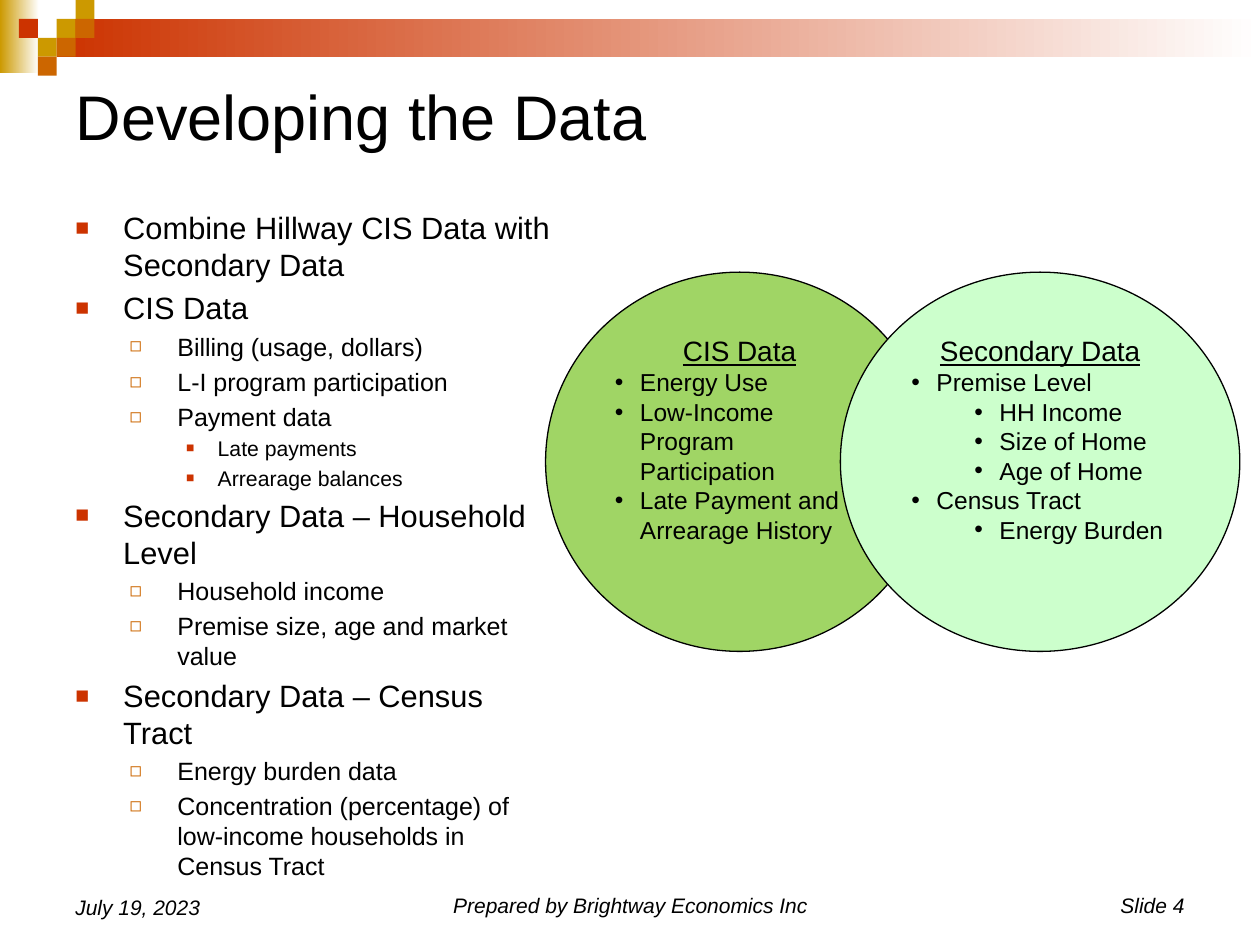
import dataclasses
import typing
import lxml.etree
import pptx
import pptx.dml.color
import pptx.enum.shapes
import pptx.enum.text
import pptx.oxml.ns
import pptx.util

RGB = pptx.dml.color.RGBColor
Align = pptx.enum.text.PP_ALIGN
Anchor = pptx.enum.text.MSO_ANCHOR
Kind = pptx.enum.shapes.MSO_SHAPE
Pt = pptx.util.Pt
Box = tuple[float, float, float, float]

BLACK = RGB(0, 0, 0)
WHITE = RGB(255, 255, 255)
GOLD = RGB(0xCC, 0x99, 0x00)
RUST = RGB(0xCC, 0x66, 0x00)
RED = RGB(0xCC, 0x33, 0x00)
GREEN = RGB(0xA0, 0xD5, 0x65)
MINT = RGB(0xCC, 0xFF, 0xCC)

WIDE, HIGH = pptx.util.Inches(10), pptx.util.Inches(7.5)
TILE_W, TILE_H = 1.5, 2


@dataclasses.dataclass
class Style:
    size: float
    left: float = 0
    hang: float = 0
    mark: str = ""
    tint: RGB | None = None
    scale: int = 100
    gap: float = 0
    align: Align = Align.LEFT
    under: bool = False
    slant: bool = False


@dataclasses.dataclass
class Line:
    text: str
    style: Style


@dataclasses.dataclass
class Disc:
    box: Box
    fill: RGB
    lines: list[Line]


@dataclasses.dataclass
class Foot:
    text: str
    box: Box
    align: Align


TITLE = Style(36)
TOP = Style(17.6, 0.38, 0.38, "■", RED, 75, 3.5)
MID = Style(14.3, 0.81, 0.38, "◻", RUST, 80, 2.9)
LOW = Style(12.1, 1.13, 0.25, "■", RED, 65, 2.4)
HEAD = Style(16, align=Align.CENTER, under=True)
DOT = Style(14, 0.2, 0.2, "•")
SUB = Style(14, 0.7, 0.2, "•")

BODY = [
    Line("Combine Hillway CIS Data with Secondary Data", dataclasses.replace(TOP, gap=0)),
    Line("CIS Data", TOP),
    Line("Billing (usage, dollars)", MID),
    Line("L-I program participation", MID),
    Line("Payment data", MID),
    Line("Late payments", LOW),
    Line("Arrearage balances", LOW),
    Line("Secondary Data – Household Level", TOP),
    Line("Household income", MID),
    Line("Premise size, age and market value", MID),
    Line("Secondary Data – Census Tract", TOP),
    Line("Energy burden data", MID),
    Line("Concentration (percentage) of low-income households in Census Tract", MID),
]
DISCS = [
    Disc((43.3, 28.8, 30.8, 40.13), GREEN, [
        Line("CIS Data", HEAD),
        Line("Energy Use", DOT),
        Line("Low-Income Program Participation", DOT),
        Line("Late Payment and Arrearage History", DOT),
    ]),
    Disc((66.7, 28.8, 31.7, 40.13), MINT, [
        Line("Secondary Data", HEAD),
        Line("Premise Level", DOT),
        Line("HH Income", SUB),
        Line("Size of Home", SUB),
        Line("Age of Home", SUB),
        Line("Census Tract", DOT),
        Line("Energy Burden", SUB),
    ]),
]
FEET = [
    Foot("July 19, 2023", (5, 91.07, 23.3, 6.93), Align.LEFT),
    Foot("Prepared by Brightway Economics Inc", (34.2, 91.07, 31.7, 6.67), Align.CENTER),
    Foot("Slide 4", (71.7, 91.07, 23.3, 6.67), Align.RIGHT),
]
BANDS = [((0, 0, 3.1, 7.73), GOLD), ((4.5, 2, 95.5, 4), RED)]
TILES = [(3, 1, GOLD), (4, 0, GOLD), (4, 1, RUST), (2, 2, GOLD),
         (1, 1, RED), (3, 2, RUST), (2, 3, RUST)]


def apply(thing: typing.Any, form: dict[str, typing.Any]) -> None:
    for name, value in form.items():
        setattr(thing, name, value)


def scale(box: Box) -> list[int]:
    return [int(share * full / 100) for share, full in zip(box, (WIDE, HIGH) * 2)]


def add_mark(para: typing.Any, style: Style) -> None:
    props = para._p.get_or_add_pPr()
    props.set("marL", str(int(pptx.util.Inches(style.left))))
    props.set("indent", str(-int(pptx.util.Inches(style.hang))))

    def add(parent: typing.Any, tag: str, **facts: str) -> typing.Any:
        return lxml.etree.SubElement(parent, pptx.oxml.ns.qn(tag), **facts)

    if style.tint is not None:
        add(add(props, "a:buClr"), "a:srgbClr", val=str(style.tint))
    add(props, "a:buSzPct", val=str(style.scale * 1000))
    add(props, "a:buFont", typeface="Arial")
    add(props, "a:buChar", char=style.mark)


def write(frame: typing.Any, lines: list[Line], anchor: Anchor = Anchor.TOP) -> None:
    apply(frame, {"word_wrap": True, "vertical_anchor": anchor})
    for spot, line in enumerate(lines):
        para = frame.add_paragraph() if spot else frame.paragraphs[0]
        style = line.style
        para.text = line.text
        if style.mark:
            add_mark(para, style)
        apply(para, {"alignment": style.align, "space_before": Pt(style.gap)})
        apply(para.font, {"name": "Arial", "size": Pt(style.size),
                          "underline": style.under, "italic": style.slant})
        para.font.color.rgb = BLACK


def add_shape(slide: typing.Any, kind: Kind, box: Box, fill: RGB) -> typing.Any:
    shape = slide.shapes.add_shape(kind, *scale(box))
    shape.shadow.inherit = False
    shape.fill.solid()
    shape.fill.fore_color.rgb = fill
    shape.line.fill.background()
    return shape


def add_band(slide: typing.Any, box: Box, start: RGB) -> None:
    fill = add_shape(slide, Kind.RECTANGLE, box, start).fill
    fill.gradient()
    fill.gradient_angle = 0
    for stop, tint, place in zip(fill.gradient_stops, (start, WHITE), (0, 1)):
        stop.color.rgb = tint
        stop.position = place


def add_disc(slide: typing.Any, disc: Disc) -> None:
    shape = add_shape(slide, Kind.OVAL, disc.box, disc.fill)
    shape.line.color.rgb = BLACK
    shape.line.width = Pt(0.75)
    write(shape.text_frame, disc.lines)


def add_text(slide: typing.Any, box: Box, lines: list[Line],
             anchor: Anchor = Anchor.TOP) -> None:
    write(slide.shapes.add_textbox(*scale(box)).text_frame, lines, anchor)


def main() -> None:
    deck = pptx.Presentation()
    apply(deck, {"slide_width": WIDE, "slide_height": HIGH})
    slide = deck.slides.add_slide(deck.slide_layouts[5])
    for box, start in BANDS:
        add_band(slide, box, start)
    for col, row, fill in TILES:
        add_shape(slide, Kind.RECTANGLE,
                  (col * TILE_W, row * TILE_H, TILE_W, TILE_H), fill)
    title = slide.shapes.title
    apply(title, dict(zip(("left", "top", "width", "height"),
                          scale((5, 6.67, 90, 11.07)))))
    write(title.text_frame, [Line("Developing the Data", TITLE)], Anchor.MIDDLE)
    add_text(slide, (5, 21.47, 40, 65.47), BODY)
    for disc in DISCS:
        add_disc(slide, disc)
    for foot in FEET:
        style = Style(12, align=foot.align, slant=True)
        add_text(slide, foot.box, [Line(foot.text, style)], Anchor.BOTTOM)
    deck.save("out.pptx")


if __name__ == "__main__":
    main()
